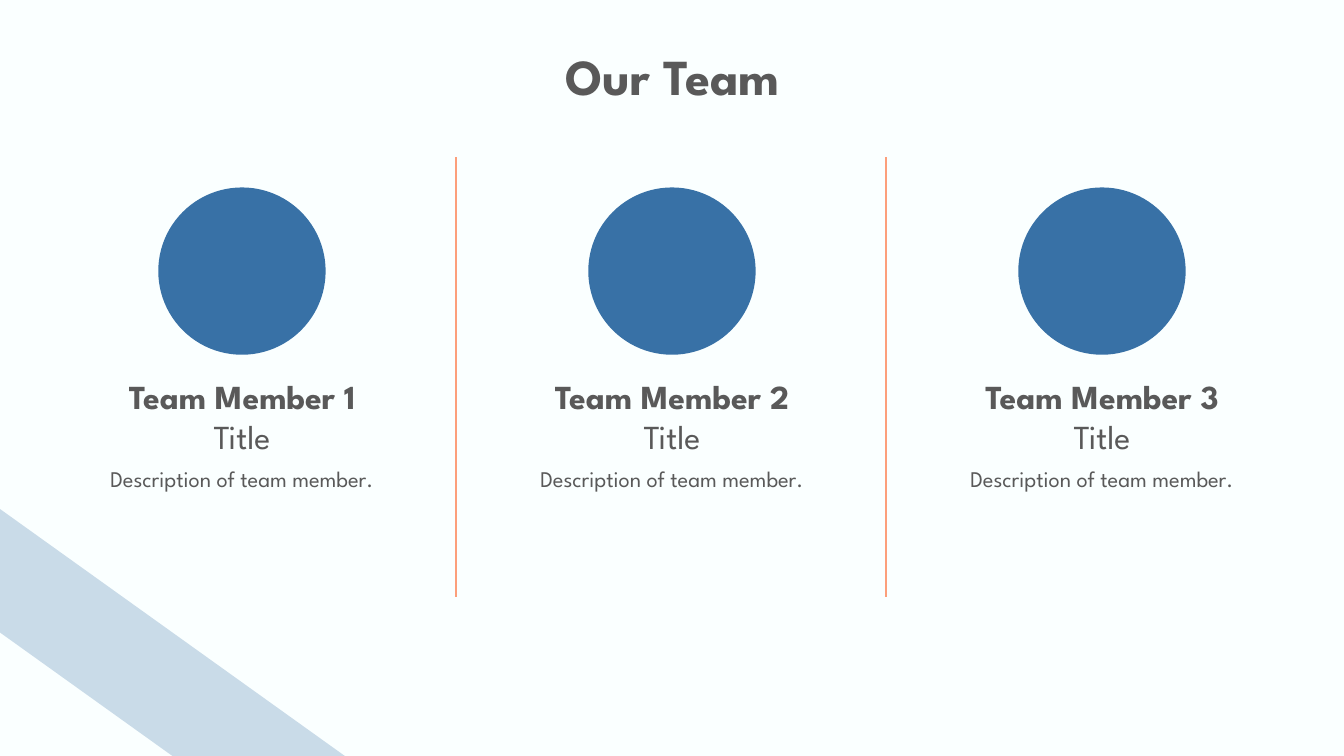
from lxml.etree import SubElement
from pptx import Presentation
from pptx.dml.color import RGBColor
from pptx.enum.shapes import MSO_CONNECTOR as Link, MSO_SHAPE as Shape
from pptx.enum.text import MSO_ANCHOR as Anchor, MSO_AUTO_SIZE as Fit, PP_ALIGN as Align
from pptx.oxml.ns import qn
from pptx.util import Inches, Pt

FONT = "League Spartan"
GRAY, BLUE, CORAL, PALE = "595959", "3871A6", "FC9F7B", "FAFFFF"
WIDE, HIGH = 13.33, 7.5
STEP = 4.265  # distance between team columns


def color(code):
    return RGBColor.from_string(code)


def place(shape, left, top, width, height):
    shape.left, shape.top = Inches(left), Inches(top)
    shape.width, shape.height = Inches(width), Inches(height)


def write(para, text, size=24, bold=False, before=0):
    para.alignment = Align.CENTER
    para.space_before = Pt(before)
    run = para.add_run()
    run.text = text
    font = run.font
    font.name, font.size, font.bold = FONT, Pt(size), bold
    font.color.rgb = color(GRAY)


def draw(slide, kind, left, top, width, height):
    shape = slide.shapes.add_shape(kind, *map(Inches, (left, top, width, height)))
    shape.shadow.inherit = False
    shape.fill.solid()
    shape.fill.fore_color.rgb = color(BLUE)
    shape.line.fill.background()
    return shape


def add_title(slide, text, *box):
    title = slide.shapes.title
    place(title, *box)
    frame = title.text_frame
    frame.auto_size, frame.vertical_anchor = Fit.NONE, Anchor.TOP
    write(frame.paragraphs[0], text, size=36, bold=True)


def add_member(slide, name, left, top, width):
    """Centre a portrait disc over the name, role and description."""
    disc = 1.66
    draw(slide, Shape.OVAL, left + (width - disc) / 2, top, disc, disc)
    box = slide.shapes.add_textbox(*map(Inches, (left, top + 1.82, width, 1.53)))
    frame = box.text_frame
    frame.word_wrap = True
    write(frame.paragraphs[0], name, bold=True)
    write(frame.add_paragraph(), "Title")
    write(frame.add_paragraph(), "Description of team member.", size=16, before=6)


def add_rule(group, left, top, height):
    ends = map(Inches, (left, top, left, top + height))
    line = group.shapes.add_connector(Link.STRAIGHT, *ends)
    line.line.color.rgb = color(CORAL)
    line.line.width = Pt(1.5)
    SubElement(line._element.spPr, qn("a:effectLst"))


def add_stripe(slide, width, height):
    """Lay a translucent stripe across the bottom left corner."""
    stripe = draw(slide, Shape.DIAGONAL_STRIPE, 0, HIGH - height, width, height)
    props = stripe._element.spPr
    props.find(qn("a:xfrm")).set("flipV", "1")
    tint = props.find(qn("a:solidFill")).find(qn("a:srgbClr"))
    SubElement(tint, qn("a:alpha"), val="25000")


def main():
    deck = Presentation()
    deck.slide_width, deck.slide_height = Inches(WIDE), Inches(HIGH)
    slide = deck.slides.add_slide(deck.slide_layouts[5])
    slide.background.fill.solid()
    slide.background.fill.fore_color.rgb = color(PALE)

    add_title(slide, "Our Team", 0.71, 0.4, 11.92, 0.71)
    for col in range(3):
        add_member(slide, f"Team Member {col + 1}", 0.78 + col * STEP, 1.86, 3.24)
    rules = slide.shapes.add_group_shape()
    for col in range(2):
        add_rule(rules, 4.52 + col * STEP, 1.56, 4.36)
    add_stripe(slide, 3.42, 2.45)
    deck.save("out.pptx")


if __name__ == "__main__":
    main()
